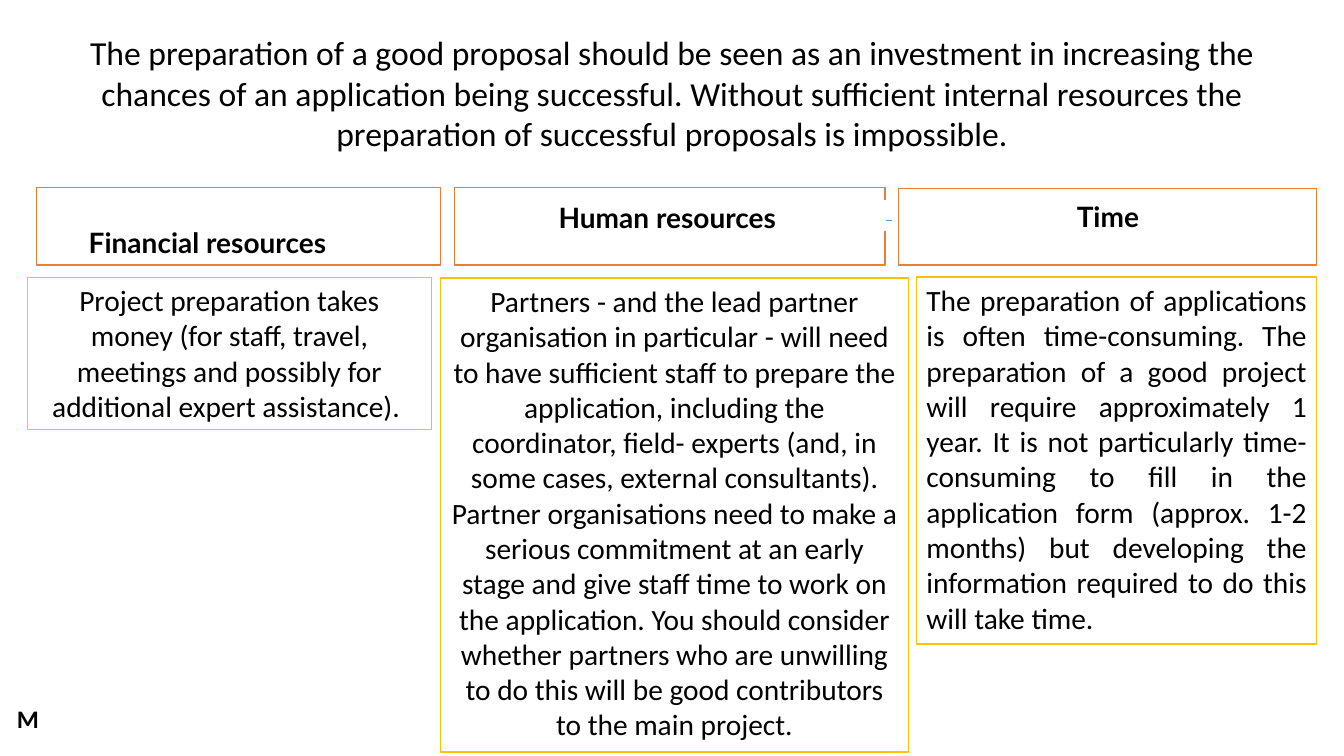
from dataclasses import dataclass

import pptx
import pptx.dml.color
import pptx.enum.shapes
import pptx.enum.text
import pptx.util
from lxml import etree
from pptx.oxml.ns import qn
from pptx.util import Inches

ALIGN = pptx.enum.text.PP_ALIGN


@dataclass(frozen=True)
class Theme:
    text: str = "000000"
    paper: str = "FFFFFF"
    heading_line: str = "ED7D31"
    body_line: str = "FFC000"
    link_line: str = "5B9BD5"
    body_font: str = "Calibri"
    heading_font: str = "Lato"
    statement_size: int = 24
    body_size: int = 21
    heading_size: int = 20
    mark_size: int = 18
    line_width: int = 1


THEME = Theme()

STATEMENT = (
    "The preparation of a good proposal should be seen as an investment in "
    "increasing the chances of an application being successful. Without "
    "sufficient internal resources the preparation of successful proposals "
    "is impossible."
)
FINANCIAL = (
    "Project preparation takes money (for staff, travel, meetings and possibly "
    "for additional expert assistance). "
)
HUMAN = (
    "Partners - and the lead partner organisation in particular - will need to "
    "have sufficient staff to prepare the application, including the "
    "coordinator, field- experts (and, in some cases, external consultants). "
    "Partner organisations need to make a serious commitment at an early stage "
    "and give staff time to work on the application. You should consider "
    "whether partners who are unwilling to do this will be good contributors "
    "to the main project."
)
TIME = (
    "The preparation of applications is often time-consuming. The preparation "
    "of a good project will require approximately 1 year. It is not "
    "particularly time-consuming to fill in the application form (approx. 1-2 "
    "months) but developing the information required to do this will take time."
)

HEADING_FRAMES = [
    (4.51, 1.86, 4.27, 0.77),
    (8.91, 1.87, 4.15, 0.76),
    (0.36, 1.86, 4.01, 0.77),
]
HEADINGS = [
    ("Time", (10.68, 1.98, 0.85, 0.31)),
    ("Human resources", (5.54, 1.99, 3.24, 0.29)),
    ("Financial resources", (0.88, 2.24, 3.34, 0.05)),
]
BODIES = [
    (FINANCIAL, (0.27, 2.75, 4.01, 1.51), ALIGN.CENTER),
    (HUMAN, (4.37, 2.76, 4.64, 4.7), ALIGN.CENTER),
    (TIME, (9.09, 2.75, 3.97, 3.64), ALIGN.JUSTIFY),
]


def rgb(value):
    return pptx.dml.color.RGBColor.from_string(value)


def inches(box):
    return [Inches(length) for length in box]


def write(frame, text, font, size, align, bold=False, inset=(0.1, 0.05), wrap=True):
    frame.word_wrap = wrap
    frame.auto_size = pptx.enum.text.MSO_AUTO_SIZE.NONE
    frame.vertical_anchor = pptx.enum.text.MSO_ANCHOR.TOP
    frame.margin_left = frame.margin_right = Inches(inset[0])
    frame.margin_top = frame.margin_bottom = Inches(inset[1])
    frame.text = text
    paragraph = frame.paragraphs[0]
    paragraph.alignment = align
    paragraph.font.name = font
    paragraph.font.size = pptx.util.Pt(size)
    paragraph.font.bold = bold
    paragraph.font.color.rgb = rgb(THEME.text)
    return paragraph


def add_statement(slide):
    statement = slide.shapes.title
    statement.left, statement.top, statement.width, statement.height = inches(
        (0.27, 0.27, 12.79, 1.31)
    )
    write(statement.text_frame, STATEMENT, THEME.body_font,
          THEME.statement_size, ALIGN.CENTER)


def add_frame(slide, box, line):
    frame = slide.shapes.add_shape(
        pptx.enum.shapes.MSO_SHAPE.RECTANGLE, *inches(box)
    )
    frame.shadow.inherit = False
    frame.fill.solid()
    frame.fill.fore_color.rgb = rgb(THEME.paper)
    frame.line.color.rgb = rgb(line)
    frame.line.width = pptx.util.Pt(THEME.line_width)
    return frame


def add_heading(slide, text, box):
    heading = add_frame(slide, box, THEME.paper)
    paragraph = write(heading.text_frame, text, THEME.heading_font,
                      THEME.heading_size, ALIGN.LEFT, bold=True, inset=(0, 0))
    paragraph.space_before = pptx.util.Pt(0.1)


def add_body(slide, text, box, align):
    body = add_frame(slide, box, THEME.body_line)
    write(body.text_frame, text, THEME.body_font, THEME.body_size, align)


def add_link(slide, start, end):
    link = slide.shapes.add_connector(
        pptx.enum.shapes.MSO_CONNECTOR.STRAIGHT, *inches(start + end)
    )
    link.line.color.rgb = rgb(THEME.link_line)
    link.line.width = pptx.util.Pt(THEME.line_width)
    etree.SubElement(link._element.spPr, qn("a:effectLst"))


def add_mark(slide, text, box):
    mark = slide.shapes.add_textbox(*inches(box))
    write(mark.text_frame, text, THEME.body_font, THEME.mark_size,
          ALIGN.LEFT, bold=True, wrap=False)


def main():
    deck = pptx.Presentation()
    deck.slide_width, deck.slide_height = inches((13.33, 7.5))
    slide = deck.slides.add_slide(deck.slide_layouts.get_by_name("Title Only"))
    add_statement(slide)
    add_link(slide, (4.82, 2.19), (8.85, 2.19))
    for box in HEADING_FRAMES:
        add_frame(slide, box, THEME.heading_line)
    for text, box, align in BODIES:
        add_body(slide, text, box, align)
    for text, box in HEADINGS:
        add_heading(slide, text, box)
    add_mark(slide, "M", (0.07, 6.93, 0.42, 0.4))
    deck.save("out.pptx")


if __name__ == "__main__":
    main()
